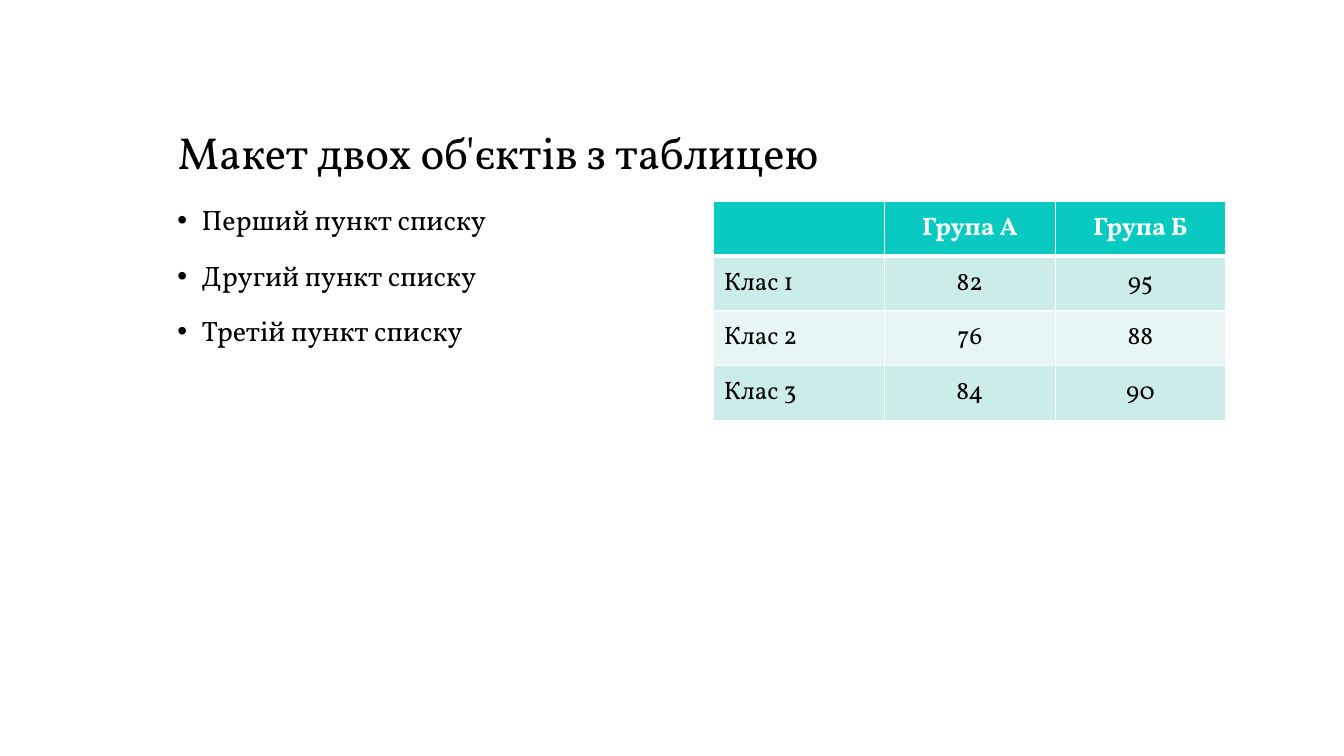
from dataclasses import dataclass
from typing import Any

from lxml.etree import SubElement
from pptx import Presentation
from pptx.dml.color import RGBColor
from pptx.enum.text import MSO_ANCHOR as Anchor, MSO_AUTO_SIZE as AutoSize, PP_ALIGN as Align
from pptx.oxml.ns import qn
from pptx.util import Cm, Pt

FONT = "Vollkorn"
BLACK, WHITE, TEAL = "000000", "FFFFFF", "08CAC1"
BANDS = ("CCECE9", "E7F6F4")
TITLE = "Макет двох об'єктів з таблицею"
POINTS = ("Перший пункт списку", "Другий пункт списку", "Третій пункт списку")
SCORES = (
    ("", "Група А", "Група Б"),
    ("Клас 1", "82", "95"),
    ("Клас 2", "76", "88"),
    ("Клас 3", "84", "90"),
)
COLUMN_WIDTH, ROW_HEIGHT = Cm(4.3), Cm(1.38)
TITLE_PLACE = {"left": Cm(4.22), "top": Cm(1.47), "width": Cm(26.67), "height": Cm(3.18)}
LIST_PLACE = {"left": Cm(4.22), "top": Cm(5.08), "width": Cm(12.9), "height": Cm(11.63)}
SCORES_PLACE = {"left": Cm(17.99), "top": Cm(5.08),
                "width": COLUMN_WIDTH * 3, "height": ROW_HEIGHT * 4}


@dataclass(frozen=True)
class RowStyle:
    fill: str
    color: str
    bold: bool
    borders: dict[str, float]


def rgb(value: str) -> RGBColor:
    """Turn a hex string into a colour."""
    return RGBColor.from_string(value)


def assign(target: Any, values: dict[str, Any]) -> None:
    """Set every named attribute on the target."""
    for name, value in values.items():
        setattr(target, name, value)


def write(paragraph: Any, text: str, size: int, color: str, bold: bool = False) -> None:
    """Add one formatted run to a paragraph."""
    run = paragraph.add_run()
    run.text = text
    assign(run.font, {"name": FONT, "size": Pt(size), "bold": bold})
    run.font.color.rgb = rgb(color)


def add_bullet(paragraph: Any) -> None:
    """Give a paragraph a hanging round bullet."""
    properties = paragraph._p.get_or_add_pPr()
    properties.set("marL", str(Cm(0.61)))
    properties.set("indent", str(-Cm(0.61)))
    SubElement(properties, qn("a:buFont"), typeface="Arial")
    SubElement(properties, qn("a:buChar"), char="•")


def add_borders(cell: Any, widths: dict[str, float]) -> None:
    """Draw white borders around a cell."""
    properties = cell._tc.get_or_add_tcPr()
    for side, width in widths.items():
        line = SubElement(properties, qn(f"a:ln{side}"), w=str(Pt(width)))
        SubElement(SubElement(line, qn("a:solidFill")), qn("a:srgbClr"), val=WHITE)


def fill_title(title: Any) -> None:
    """Place and write the slide title."""
    assign(title, TITLE_PLACE)
    assign(title.text_frame, {"vertical_anchor": Anchor.BOTTOM, "word_wrap": True,
                              "auto_size": AutoSize.NONE})
    heading = title.text_frame.paragraphs[0]
    assign(heading, {"alignment": Align.LEFT, "line_spacing": 0.9})
    write(heading, TITLE, 32, BLACK)


def add_list(slide: Any) -> None:
    """Add the bulleted list."""
    frame = slide.shapes.add_textbox(**LIST_PLACE).text_frame
    frame.word_wrap = True
    for index, text in enumerate(POINTS):
        point = frame.add_paragraph() if index else frame.paragraphs[0]
        add_bullet(point)
        assign(point, {"line_spacing": 0.9, "space_before": Pt(18 if index else 0)})
        write(point, text, 20, BLACK)


def row_style(row: int) -> RowStyle:
    """Choose the header style or a band style for a row."""
    sides = {"L": 1, "R": 1, "T": 1, "B": 1}
    if row == 0:
        return RowStyle(TEAL, WHITE, True, sides | {"B": 3})
    if row == 1:
        sides["T"] = 3
    return RowStyle(BANDS[(row - 1) % 2], BLACK, False, sides)


def add_scores(slide: Any) -> None:
    """Add the table of class scores by group."""
    scores = slide.shapes.add_table(len(SCORES), len(SCORES[0]), **SCORES_PLACE).table
    for column in scores.columns:
        column.width = COLUMN_WIDTH
    for row, values in enumerate(SCORES):
        scores.rows[row].height = ROW_HEIGHT
        style = row_style(row)
        for column, value in enumerate(values):
            cell = scores.cell(row, column)
            cell.vertical_anchor = Anchor.MIDDLE
            add_borders(cell, style.borders)
            cell.fill.solid()
            cell.fill.fore_color.rgb = rgb(style.fill)
            if value:
                entry = cell.text_frame.paragraphs[0]
                entry.alignment = Align.CENTER if column else Align.LEFT
                write(entry, value, 18, style.color, style.bold)


def main() -> None:
    """Build and save the slide."""
    deck = Presentation()
    assign(deck, {"slide_width": Cm(33.87), "slide_height": Cm(19.05)})
    slide = deck.slides.add_slide(deck.slide_layouts[5])
    fill_title(slide.shapes.title)
    add_list(slide)
    add_scores(slide)
    deck.save("out.pptx")


if __name__ == "__main__":
    main()
